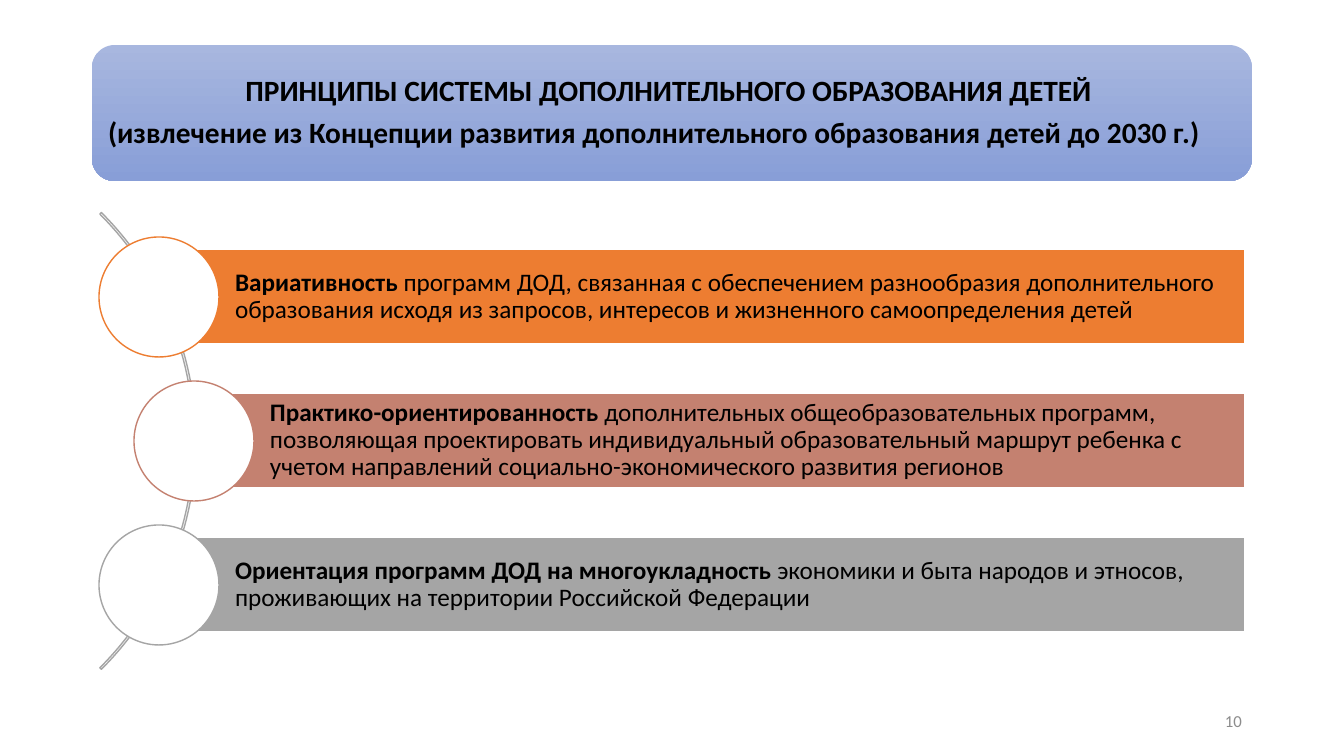
from pptx import Presentation
from pptx import util as u
from pptx.dml.color import RGBColor
from pptx.enum import shapes, text

PX = 12192000 / 1344  # EMU in one px of a slide 1344 px wide

BLACK = RGBColor(0x00, 0x00, 0x00)
WHITE = RGBColor(0xFF, 0xFF, 0xFF)
ORANGE = RGBColor(0xED, 0x7D, 0x31)
ROSE = RGBColor(0xC4, 0x81, 0x70)
GREY = RGBColor(0xA5, 0xA5, 0xA5)
NUMBER_GREY = RGBColor(0x8C, 0x8C, 0x8C)
BLUE_TOP = RGBColor(0xA8, 0xB7, 0xDF)
BLUE_BOTTOM = RGBColor(0x88, 0x9E, 0xD7)

TITLE_LINES = [
    ("ПРИНЦИПЫ СИСТЕМЫ ДОПОЛНИТЕЛЬНОГО ОБРАЗОВАНИЯ ДЕТЕЙ ", text.PP_ALIGN.CENTER),
    ("(извлечение из Концепции развития дополнительного образования детей до 2030 г.)",
     text.PP_ALIGN.LEFT),
]
# left edge of the bar, colour, bold words, plain words
PRINCIPLES = [
    (159, ORANGE, "Вариативность",
     " программ ДОД, связанная с обеспечением разнообразия дополнительного "
     "образования исходя из запросов, интересов и жизненного самоопределения детей"),
    (194, ROSE, "Практико-ориентированность",
     " дополнительных общеобразовательных программ, позволяющая проектировать "
     "индивидуальный образовательный маршрут ребенка с учетом направлений "
     "социально-экономического развития регионов"),
    (159, GREY, "Ориентация программ ДОД на многоукладность ",
     "экономики и быта народов и этносов, проживающих на территории "
     "Российской Федерации"),
]
BAR_TOP, BAR_PITCH, BAR_HEIGHT, BAR_RIGHT = 249, 144, 95, 1245
CIRCLE = 120


def px(length):
    return u.Emu(round(length * PX))


def add_shape(slide, kind, left, top, width, height, fill=None, line=None):
    shape = slide.shapes.add_shape(kind, px(left), px(top), px(width), px(height))
    shape.shadow.inherit = False
    if fill is None:
        shape.fill.background()
    else:
        shape.fill.solid()
        shape.fill.fore_color.rgb = fill
    if line is None:
        shape.line.fill.background()
    else:
        shape.line.color.rgb = line
        shape.line.width = u.Pt(1)
    return shape


def set_frame(frame, left, other):
    """Wrap and centre the text vertically; left and other are insets in px."""
    frame.word_wrap = True
    frame.auto_size = text.MSO_AUTO_SIZE.NONE
    frame.vertical_anchor = text.MSO_ANCHOR.MIDDLE
    frame.margin_left = px(left)
    frame.margin_top = frame.margin_right = frame.margin_bottom = px(other)


def set_para(para, align, after=0, spacing=0.9):
    para.alignment = align
    para.line_spacing = spacing
    para.space_before = u.Pt(0)
    para.space_after = u.Pt(after)


def add_span(para, words, size, color=BLACK, bold=False):
    span = para.add_run()
    span.text = words
    span.font.name = "Calibri"
    span.font.size = u.Pt(size)
    span.font.bold = bold
    span.font.color.rgb = color


def add_title(slide):
    band = add_shape(slide, shapes.MSO_SHAPE.ROUNDED_RECTANGLE, 92, 45, 1160, 136)
    band.fill.gradient()
    band.fill.gradient_angle = 270
    for stop, color in zip(band.fill.gradient_stops, (BLUE_TOP, BLUE_BOTTOM)):
        stop.color.rgb = color

    title = slide.shapes.title
    title.left, title.top, title.width, title.height = px(99), px(52), px(1146), px(122)
    title.element.addprevious(band.element)  # the band lies behind the title
    frame = title.text_frame
    set_frame(frame, 9, 9)
    for index, (words, align) in enumerate(TITLE_LINES):
        para = frame.add_paragraph() if index else frame.paragraphs[0]
        set_para(para, align, after=7)
        add_span(para, words, 21, bold=True)


def add_arc(slide):
    arc = add_shape(slide, shapes.MSO_SHAPE.BLOCK_ARC, -450, 118, 646, 646, line=GREY)
    # start and end angles are 315 and 45 degrees, in 60000ths over 100000
    for index, value in enumerate((189, 27, 0.0034)):
        arc.adjustments[index] = value


def add_principle(slide, row, left, color, bold_words, plain_words):
    top = BAR_TOP + row * BAR_PITCH
    bar = add_shape(slide, shapes.MSO_SHAPE.RECTANGLE, left, top,
                    BAR_RIGHT - left, BAR_HEIGHT, color, WHITE)
    set_frame(bar.text_frame, 76, 5)
    para = bar.text_frame.paragraphs[0]
    set_para(para, text.PP_ALIGN.LEFT)
    add_span(para, bold_words, 18, bold=True)
    add_span(para, plain_words, 18)
    add_shape(slide, shapes.MSO_SHAPE.OVAL, left - CIRCLE // 2,
              top + (BAR_HEIGHT - CIRCLE) // 2 + 1, CIRCLE, CIRCLE, WHITE, color)


def add_page_number(slide, number):
    box = slide.shapes.add_textbox(px(950), px(701), px(302), px(40))
    set_frame(box.text_frame, 10, 10)
    para = box.text_frame.paragraphs[0]
    set_para(para, text.PP_ALIGN.RIGHT, spacing=1.0)
    add_span(para, number, 12, NUMBER_GREY)


def main():
    deck = Presentation()
    deck.slide_width, deck.slide_height = px(1344), px(756)
    slide = deck.slides.add_slide(deck.slide_layouts.get_by_name("Title Only"))
    add_title(slide)
    add_arc(slide)
    for row, principle in enumerate(PRINCIPLES):
        add_principle(slide, row, *principle)
    add_page_number(slide, "10")
    deck.save("out.pptx")


if __name__ == "__main__":
    main()
